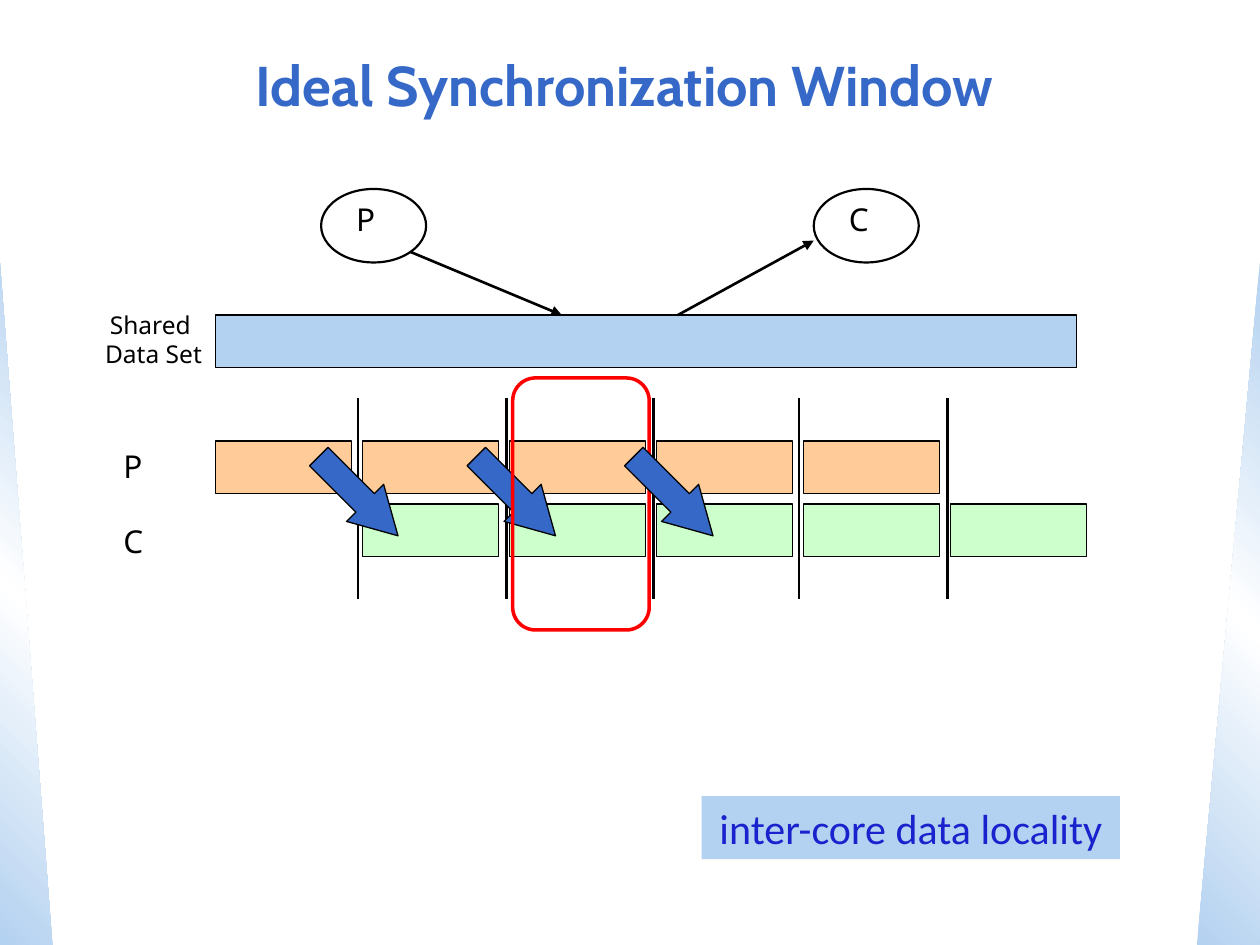
from copy import deepcopy

from pptx import Presentation
from pptx import util as u
from pptx.dml.color import RGBColor
from pptx.enum import shapes, text
from pptx.oxml import ns, xmlchemy

SHAPE = shapes.MSO_SHAPE
BLUE, PALE_BLUE, ORANGE, GREEN = "3568C7", "B3D1F0", "FFCC99", "CCFFCC"


def color(value):
    return RGBColor.from_string(value)


def write(frame, content, size=18, font="Noto Sans", ink="000000", bold=False,
          align=text.PP_ALIGN.LEFT, anchor=text.MSO_ANCHOR.TOP, wrap=False):
    frame.word_wrap = wrap
    frame.auto_size = text.MSO_AUTO_SIZE.NONE if wrap else text.MSO_AUTO_SIZE.SHAPE_TO_FIT_TEXT
    frame.vertical_anchor = anchor
    for index, line in enumerate(content.split("\n")):
        para = frame.paragraphs[0] if index == 0 else frame.add_paragraph()
        para.alignment = align
        span = para.add_run()
        span.text = line
        span.font.size = u.Pt(size)
        span.font.name = font
        span.font.bold = bold
        span.font.color.rgb = color(ink)


class Diagram:
    """Holds the current slide and the line style of the diagram."""

    def __init__(self, page, ink="000000", thin=0.75, thick=1.5):
        self.page, self.ink, self.thin, self.thick = page, ink, thin, thick

    def shape(self, kind, x, y, width, height, fill=None, line=None, weight=None):
        """Add a preset shape; line="" leaves the outline out."""
        box = self.page.shapes.add_shape(kind, u.Pt(x), u.Pt(y), u.Pt(width), u.Pt(height))
        box.shadow.inherit = False
        if fill:
            box.fill.solid()
            box.fill.fore_color.rgb = color(fill)
        else:
            box.fill.background()
        if line == "":
            box.line.fill.background()
        else:
            box.line.color.rgb = color(line or self.ink)
            box.line.width = u.Pt(weight or self.thin)
        return box

    def side_wedge(self, x, width, angle, mirrored=False):
        wedge = self.shape(SHAPE.RIGHT_TRIANGLE, x, 150, width, 390, line="")
        if mirrored:
            wedge._element.spPr.find(ns.qn("a:xfrm")).set("flipH", "1")
        wedge.fill.gradient()
        wedge.fill.gradient_angle = angle
        stops = wedge._element.spPr.find(ns.qn("a:gradFill")).find(ns.qn("a:gsLst"))
        stops.insert(1, deepcopy(stops[0]))
        shades = (PALE_BLUE, "FFFFFF", PALE_BLUE)
        for stop, place, shade in zip(wedge.fill.gradient_stops, (0, 0.5, 1), shades):
            stop.position = place
            stop.color.rgb = color(shade)

    def label(self, content, x, y, width, height, **style):
        box = self.page.shapes.add_textbox(u.Pt(x), u.Pt(y), u.Pt(width), u.Pt(height))
        write(box.text_frame, content, **style)

    def line(self, x1, y1, x2, y2, arrow=False):
        line = self.page.shapes.add_connector(
            shapes.MSO_CONNECTOR.STRAIGHT, u.Pt(x1), u.Pt(y1), u.Pt(x2), u.Pt(y2))
        line.line.color.rgb = color(self.ink)
        line.line.width = u.Pt(self.thick)
        if arrow:
            head = xmlchemy.OxmlElement("a:tailEnd")
            head.set("type", "triangle")
            line.line._get_or_add_ln().append(head)
        line._element.spPr.append(xmlchemy.OxmlElement("a:effectLst"))

    def node(self, name, x):
        self.shape(SHAPE.OVAL, x, 108, 60, 42, weight=1.25)
        self.label(name, x + 13, 111, 31, 36)

    def handoff(self, step):
        """Add the arrow from producer window to the next consumer window."""
        arrow = self.shape(SHAPE.RIGHT_ARROW, 172.8 + 90 * step, 268.6, 64, 30, BLUE)
        arrow.adjustments[1] = 0.887
        arrow.rotation = 45


def main():
    deck = Presentation()
    deck.slide_width, deck.slide_height = u.Pt(720), u.Pt(540)
    diagram = Diagram(deck.slides.add_slide(deck.slide_layouts[6]))
    center = text.PP_ALIGN.CENTER

    diagram.side_wedge(0, 30, 45)
    diagram.side_wedge(684, 36, 315, mirrored=True)
    diagram.label("Ideal Synchronization Window", 18, 18, 678, 60, size=32, font="Cabin",
                  ink=BLUE, bold=True, align=center, anchor=text.MSO_ANCHOR.MIDDLE, wrap=True)

    left, pitch, windows = 123, 84, 5
    diagram.shape(SHAPE.RECTANGLE, left, 180, 492, 30, PALE_BLUE)
    for window in range(windows):
        x = left + pitch * window
        diagram.shape(SHAPE.RECTANGLE, x, 252, 78, 30, ORANGE)
        diagram.shape(SHAPE.RECTANGLE, x + pitch, 288, 78, 30, GREEN)
    for x in (204.5, 289.4, 373.5, 456.5, 541.4):
        diagram.line(x, 342, x, 227.5)

    diagram.node("C", 465)
    diagram.node("P", 183.5)
    diagram.line(387.4, 180, 465, 137.5, arrow=True)
    diagram.line(234.7, 144, 321, 180, arrow=True)

    diagram.label("Shared \nData Set", 52.5, 173.5, 70.5, 41, size=14, align=center)
    diagram.label("P", 63.4, 252, 30, 36)
    diagram.label("C", 63.4, 294.5, 32, 36)

    diagram.handoff(1)
    diagram.shape(SHAPE.ROUNDED_RECTANGLE, 293, 216, 78, 144, line="FF0000", weight=2)
    diagram.handoff(0)
    diagram.handoff(2)

    note = diagram.shape(SHAPE.RECTANGLE, 401, 455, 239, 36, PALE_BLUE, line="")
    write(note.text_frame, "inter-core data locality", size=24, font="Calibri",
          ink="1822CD", align=center)
    deck.save("out.pptx")


if __name__ == "__main__":
    main()
